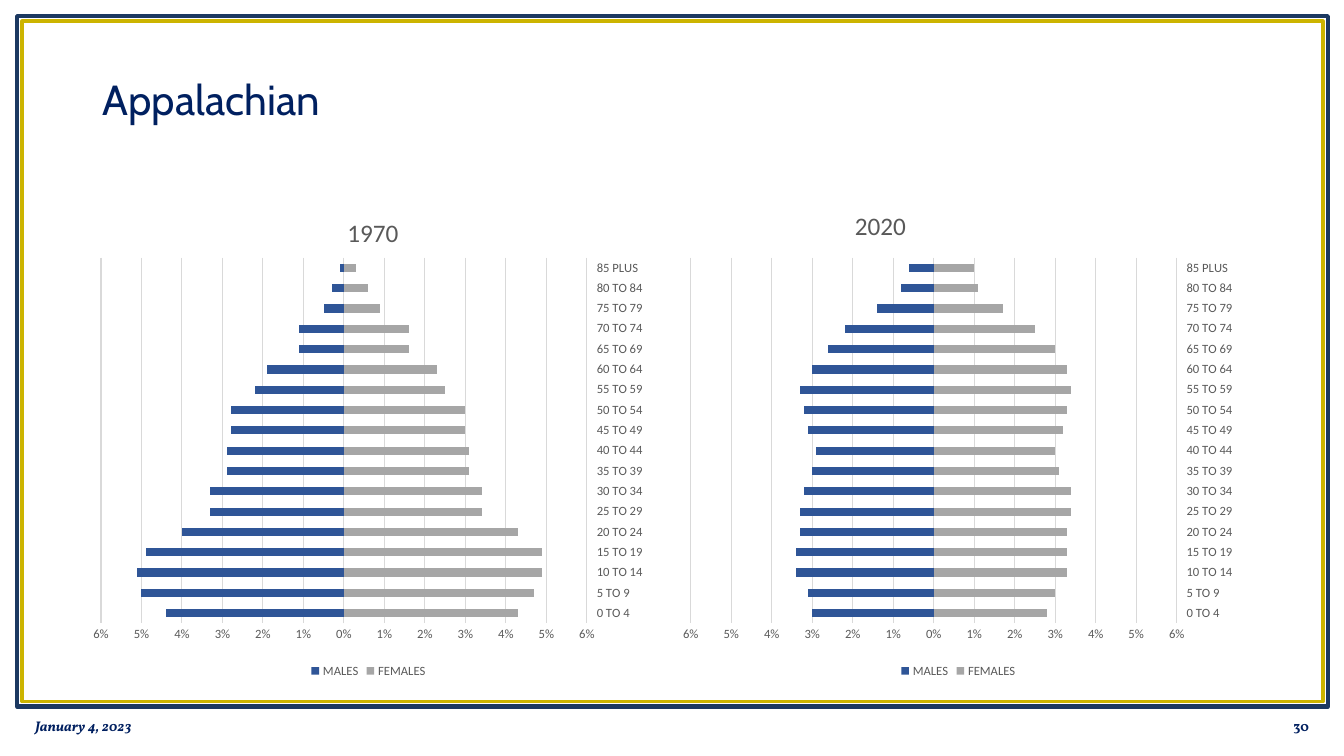
from dataclasses import dataclass

import pptx
import pptx.chart.data
import pptx.dml.color
import pptx.enum.chart
import pptx.enum.shapes
import pptx.enum.text
import pptx.oxml
import pptx.oxml.ns
import pptx.util
from pptx.util import Inches, Pt

NAVY, GREY, GRID = "002060", "595959", "D9D9D9"
MALE, FEMALE = "2F5597", "A6A6A6"
AGES = [f"{a} TO {a + 4}" for a in range(0, 85, 5)] + ["85 PLUS"]
PLOT_LAYOUT = dict(x=0.032, y=0.142, w=0.85, h=0.739)


@dataclass
class Frame:
    left: float
    top: float
    width: float
    height: float
    color: str
    weight: float


@dataclass
class Pyramid:
    year: str
    left: float
    title_x: float
    title_y: float
    males: list[float]
    females: list[float]


FRAMES = [
    Frame(0.17, 0.16, 13, 6.85, "1C3961", 3),
    Frame(0.22, 0.21, 12.9, 6.75, "CCB400", 2.5),
]

# Shares of the population in percent, youngest group first
PYRAMIDS = [
    Pyramid("2020", 6.67, 0.311, 0.033,
            [3, 3.1, 3.4, 3.4, 3.3, 3.3, 3.2, 3, 2.9,
             3.1, 3.2, 3.3, 3, 2.6, 2.2, 1.4, 0.8, 0.6],
            [2.8, 3, 3.3, 3.3, 3.3, 3.4, 3.4, 3.1, 3,
             3.2, 3.3, 3.4, 3.3, 3, 2.5, 1.7, 1.1, 1]),
    Pyramid("1970", 0.82, 0.455, 0.047,
            [4.4, 5, 5.1, 4.9, 4, 3.3, 3.3, 2.9, 2.9,
             2.8, 2.8, 2.2, 1.9, 1.1, 1.1, 0.5, 0.3, 0.1],
            [4.3, 4.7, 4.9, 4.9, 4.3, 3.4, 3.4, 3.1, 3.1,
             3, 3, 2.5, 2.3, 1.6, 1.6, 0.9, 0.6, 0.3]),
]


def rgb(color: str) -> pptx.dml.color.RGBColor:
    return pptx.dml.color.RGBColor.from_string(color)


def set_font(font, size: float, color: str, name: str = "Calibri",
             bold: bool = False, italic: bool = False) -> None:
    font.size, font.name = Pt(size), name
    font.bold, font.italic = bold, italic
    font.color.rgb = rgb(color)


def set_line(line, color: str, weight: float) -> None:
    line.color.rgb = rgb(color)
    line.width = Pt(weight)


def add_frame(s, frame: Frame) -> None:
    sp = s.shapes.add_shape(pptx.enum.shapes.MSO_SHAPE.RECTANGLE,
                            Inches(frame.left), Inches(frame.top),
                            Inches(frame.width), Inches(frame.height))
    sp.shadow.inherit = False
    sp.fill.background()
    set_line(sp.line, frame.color, frame.weight)


def add_text(s, text: str, left: float, top: float, width: float, height: float,
             *, size: float, font: str, bold: bool = False, italic: bool = False,
             right: bool = False, spacing: float = 1.0) -> None:
    sp = s.shapes.add_textbox(Inches(left), Inches(top), Inches(width), Inches(height))
    tf = sp.text_frame
    tf.word_wrap = True
    tf.vertical_anchor = pptx.enum.text.MSO_ANCHOR.MIDDLE
    p = tf.paragraphs[0]
    align = pptx.enum.text.PP_ALIGN
    p.alignment = align.RIGHT if right else align.LEFT
    p.line_spacing = spacing
    r = p.add_run()
    r.text = text
    set_font(r.font, size, NAVY, font, bold, italic)


def set_layout(parent, index: int, inner: bool = False, **box: float) -> None:
    """Place a chart part by hand, in fractions of the chart."""
    for old in parent.findall(pptx.oxml.ns.qn("c:layout")):
        parent.remove(old)
    target = '<c:layoutTarget val="inner"/>' if inner else ""
    modes = "".join(f'<c:{k}Mode val="edge"/>' for k in "xy")
    sizes = "".join(f'<c:{k} val="{v}"/>' for k, v in box.items())
    parent.insert(index, pptx.oxml.parse_xml(
        f'<c:layout {pptx.oxml.ns.nsdecls("c")}><c:manualLayout>'
        f'{target}{modes}{sizes}</c:manualLayout></c:layout>'))


def add_pyramid(s, pyramid: Pyramid) -> None:
    enum = pptx.enum.chart
    data = pptx.chart.data.CategoryChartData(number_format="0%;0%")
    data.categories = AGES
    data.add_series("MALES", [round(-v / 100, 3) for v in pyramid.males])
    data.add_series("FEMALES", [round(v / 100, 3) for v in pyramid.females])
    chart = s.shapes.add_chart(enum.XL_CHART_TYPE.BAR_STACKED, Inches(pyramid.left),
                               Inches(1.86), Inches(5.67), Inches(4.91), data).chart
    set_font(chart.font, 10, "000000")

    # Title and legend
    chart.has_title = True
    title = chart.chart_title
    r = title.text_frame.paragraphs[0].add_run()
    r.text = pyramid.year
    set_font(r.font, 18, GREY)
    title.include_in_layout = False
    set_layout(title._element, 1, x=pyramid.title_x, y=pyramid.title_y)
    chart.has_legend = True
    chart.legend.position = enum.XL_LEGEND_POSITION.BOTTOM
    chart.legend.include_in_layout = False
    set_font(chart.legend.font, 9, GREY)

    # Bars
    plot = chart.plots[0]
    plot.gap_width, plot.overlap = 150, 100
    plot.vary_by_categories = False
    for series, color in zip(plot.series, (MALE, FEMALE)):
        series.invert_if_negative = False
        series.format.fill.solid()
        series.format.fill.fore_color.rgb = rgb(color)
    set_layout(chart._chartSpace.chart.plotArea, 0, inner=True, **PLOT_LAYOUT)

    # Axes
    ages, shares = chart.category_axis, chart.value_axis
    for axis in (ages, shares):
        axis.major_tick_mark = axis.minor_tick_mark = enum.XL_TICK_MARK.NONE
        set_font(axis.tick_labels.font, 9, GREY)
    ages.has_major_gridlines = False
    ages.tick_label_position = enum.XL_TICK_LABEL_POSITION.HIGH
    set_line(ages.format.line, GRID, 0.75)
    shares.minimum_scale, shares.maximum_scale = -0.06, 0.06
    shares.major_unit = 0.01
    shares.tick_labels.number_format = "0%;0%"
    shares.tick_labels.number_format_is_linked = False
    shares.format.line.fill.background()
    shares.has_major_gridlines = True
    set_line(shares.major_gridlines.format.line, GRID, 0.75)


def main() -> None:
    prs = pptx.Presentation()
    prs.slide_width, prs.slide_height = Inches(13.33), Inches(7.5)
    s = prs.slides.add_slide(prs.slide_layouts[6])

    # Border, title and footer
    for frame in FRAMES:
        add_frame(s, frame)
    add_text(s, "Appalachian", 0.92, 0.4, 11.5, 1.23, size=30, font="Cabin", spacing=0.9)
    add_text(s, "January 4, 2023", 0.25, 7, 3, 0.4, size=10, font="Vollkorn",
             bold=True, italic=True)
    add_text(s, "30", 10.08, 7, 3, 0.4, size=10, font="Vollkorn", bold=True, right=True)

    # Population pyramids
    for pyramid in PYRAMIDS:
        add_pyramid(s, pyramid)

    prs.save("out.pptx")


if __name__ == "__main__":
    main()
